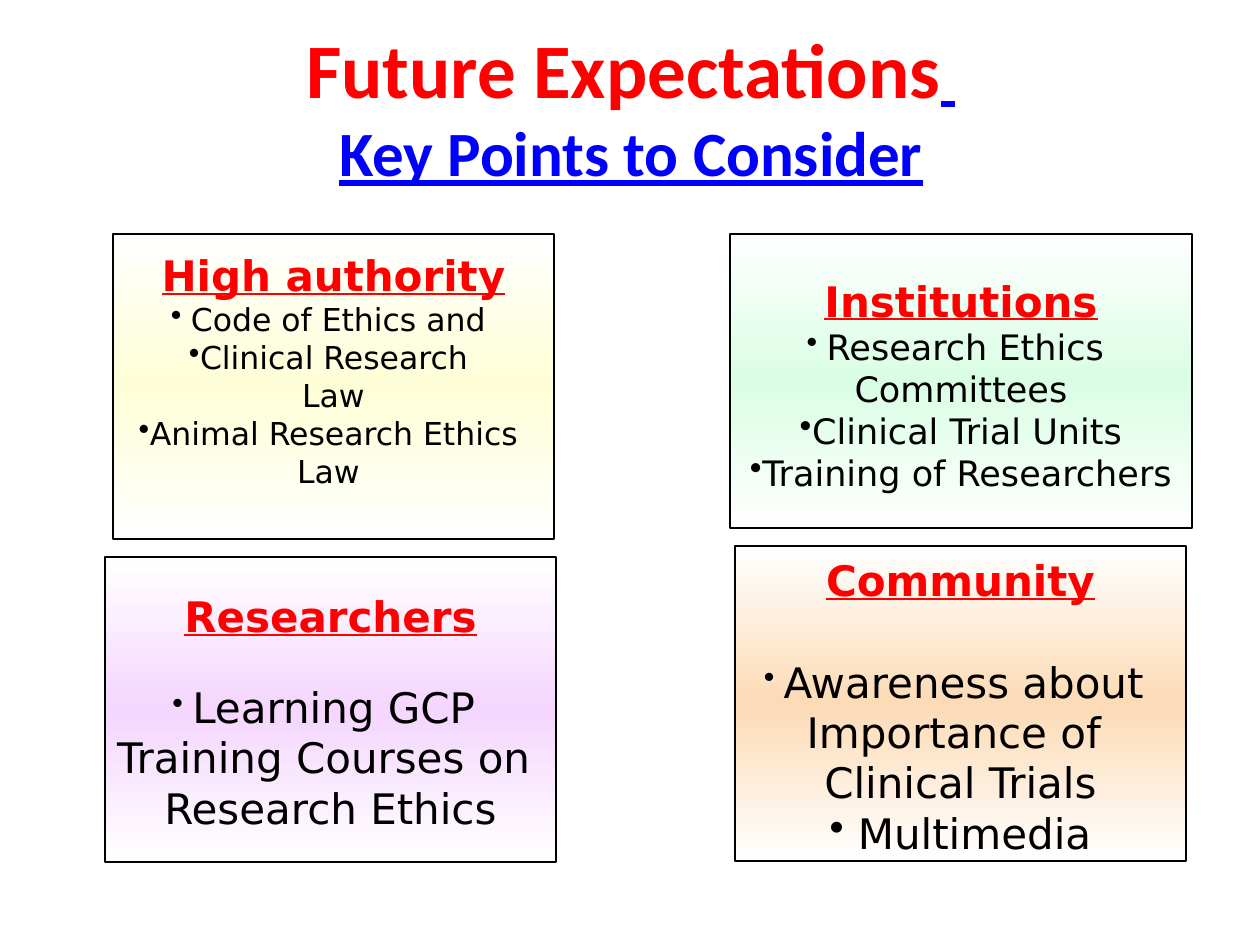
from lxml.etree import SubElement as Sub
from pptx import Presentation
from pptx.dml.color import RGBColor
from pptx.enum.shapes import MSO_SHAPE as Kind
from pptx.enum.text import MSO_ANCHOR as Anchor, PP_ALIGN as Align
from pptx.oxml.ns import qn
from pptx.util import Pt

PX = 914400 / 126
RED, BLUE, BLACK, WHITE = "FF0000", "0000FF", "000000", "FFFFFF"
SANS = "DejaVu Sans"


def px(n):
    return round(n * PX)


def tint(code):
    return RGBColor.from_string(code)


class Deck:
    def __init__(self, wide, high):
        self.deck = Presentation()
        self.deck.slide_width, self.deck.slide_height = px(wide), px(high)
        self.page = self.deck.slides.add_slide(self.deck.slide_layouts[6])

    def style(self, font, size, color, name=SANS, bold=False, line=False):
        font.name, font.size, font.bold = name, Pt(size), bold
        font.underline = line
        font.color.rgb = tint(color)

    def title(self, area, top, sub):
        box = self.page.shapes.add_textbox(*map(px, area))
        frame = box.text_frame
        frame.word_wrap = True
        frame.vertical_anchor = Anchor.MIDDLE
        para = frame.paragraphs[0]
        para.alignment = Align.CENTER
        run = para.add_run()
        run.text = top
        self.style(run.font, 44, RED, "Calibri", True)
        for part in (" ", sub):
            if part == sub:
                para.add_line_break()
            run = para.add_run()
            run.text = part
            self.style(run.font, 36, BLUE, "Calibri", True, True)

    def fade(self, shape, color):
        shape.fill.gradient()
        shape.fill.gradient_angle = 270
        stops = shape.fill._fill._gradFill.find(qn("a:gsLst"))
        for stop in list(stops):
            stops.remove(stop)
        for spot, code in ((0, WHITE), (50, color), (100, WHITE)):
            stop = Sub(stops, qn("a:gs"), pos=str(spot * 1000))
            Sub(stop, qn("a:srgbClr"), val=code)

    def bullet(self, para):
        props = para._p.get_or_add_pPr()
        props.set("marL", "0")
        props.set("indent", "0")
        Sub(props, qn("a:buChar"), char="•")

    def card(self, area, color, inset, head, gap, size, items):
        box = self.page.shapes.add_shape(Kind.RECTANGLE, *map(px, area))
        box.shadow.inherit = False
        self.fade(box, color)
        box.line.color.rgb = tint(BLACK)
        box.line.width = Pt(0.75)
        frame = box.text_frame
        frame.word_wrap = False
        frame.vertical_anchor = Anchor.TOP
        frame.margin_top, frame.margin_bottom = px(inset), 0
        para = frame.paragraphs[0]
        para.text = head
        para.alignment = Align.CENTER
        para.space_after = Pt(gap)
        self.style(para.font, 24, RED, bold=True, line=True)
        for i, item in enumerate(items):
            para = frame.add_paragraph()
            para.alignment = Align.CENTER
            if i == 0:
                lead = para.add_run()
                lead.text = " "
                self.style(lead.font, 18, BLACK, "Arial")
            run = para.add_run()
            run.text = item.removeprefix("•")
            self.style(run.font if i == 0 else para.font, size, BLACK)
            if item.startswith("•"):
                self.bullet(para)

    def save(self):
        self.deck.save("out.pptx")


def main():
    deck = Deck(1260, 945)
    deck.title((64, 26, 1134, 158), "Future Expectations",
               "Key Points to Consider")
    deck.card((113, 234, 441, 305), "FEFED6", 16, "High authority", 0, 18,
              ["•Code of Ethics and ", "•Clinical Research ", "Law",
               "•Animal Research Ethics ", "Law "])
    deck.card((730, 234, 462, 294), "DAFEE5", 41, "Institutions", 0, 20,
              ["•Research Ethics ", "Committees", "•Clinical Trial Units",
               "•Training of Researchers"])
    deck.card((105, 557, 451, 305), "F4D6FE", 34, "Researchers", 23, 24,
              ["•Learning GCP ", "Training Courses on ", "Research Ethics"])
    deck.card((735, 546, 451, 315), "FCDBB6", 9, "Community", 29, 24,
              ["•Awareness about ", "Importance of ", "Clinical Trials",
               "• Multimedia"])
    deck.save()


if __name__ == "__main__":
    main()
